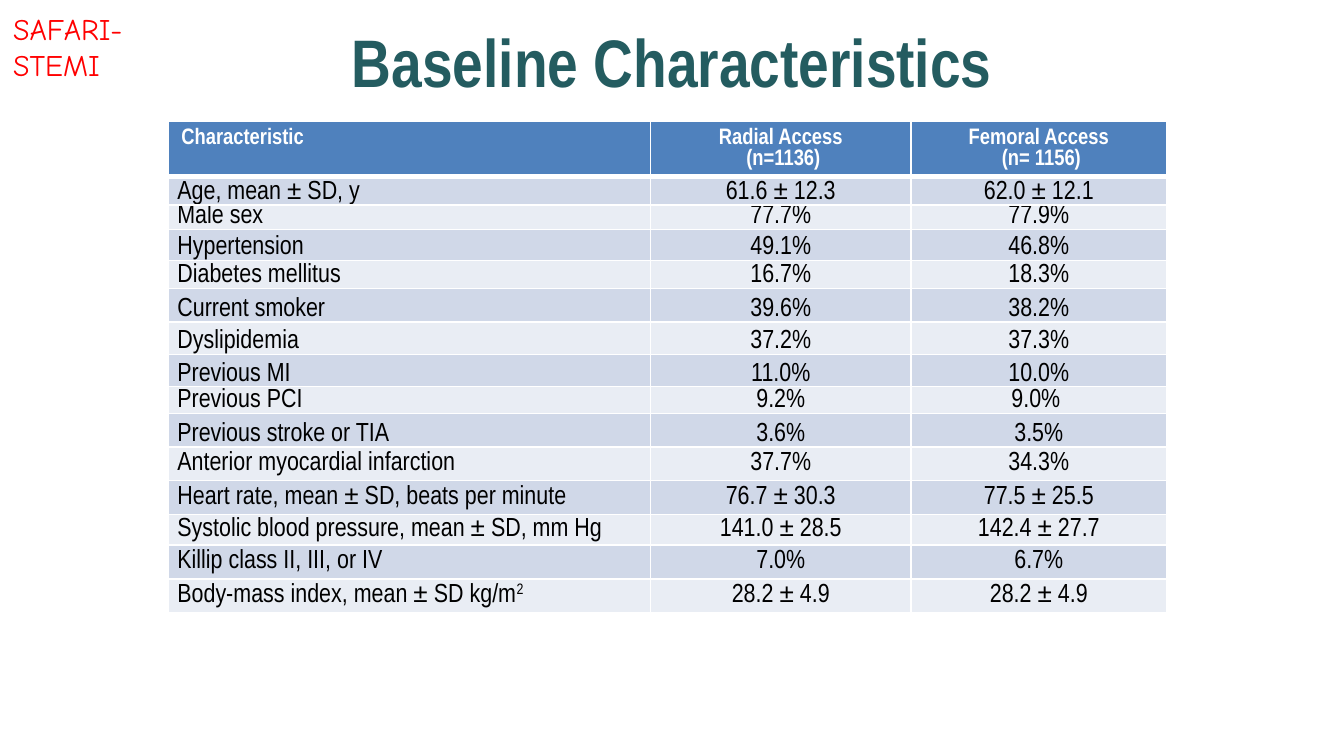
from dataclasses import dataclass

from lxml.etree import SubElement
from pptx import Presentation
from pptx.dml.color import RGBColor
from pptx.enum.text import MSO_ANCHOR as Anchor, PP_ALIGN as Align
from pptx.oxml.ns import qn
from pptx.util import Inches, Pt

COLORS = {
    "title": "245C60",
    "trial": "FF0000",
    "header": "4F81BD",
    "odd": "D0D8E8",
    "even": "E9EDF4",
    "white": "FFFFFF",
    "black": "000000",
}
NARROW = "Arial Narrow"
COLUMN_WIDTHS = (3.59, 1.94, 1.9)
HEADER_HEIGHT = 0.38
HEADERS = ("Characteristic", "Radial Access\n (n=1136)", "Femoral Access\n (n= 1156)")


@dataclass
class Characteristic:
    label: str
    radial: str
    femoral: str
    height: float = 0.25
    anchor: Anchor = Anchor.MIDDLE
    superscript: str = ""


CHARACTERISTICS = [
    Characteristic("Age, mean ± SD, y", "61.6 ± 12.3", "62.0 ± 12.1", 0.21, Anchor.BOTTOM),
    Characteristic("Male sex", "77.7%", "77.9%", 0.18, Anchor.BOTTOM),
    Characteristic("Hypertension", "49.1%", "46.8%", 0.23, Anchor.BOTTOM),
    Characteristic("Diabetes mellitus", "16.7%", "18.3%", 0.21, Anchor.BOTTOM),
    Characteristic("Current smoker", "39.6%", "38.2%", 0.25, Anchor.BOTTOM),
    Characteristic("Dyslipidemia", "37.2%", "37.3%", 0.24, Anchor.BOTTOM),
    Characteristic("Previous MI", "11.0%", "10.0%", 0.24, Anchor.BOTTOM),
    Characteristic("Previous PCI", "9.2%", "9.0% ", 0.2, Anchor.BOTTOM),
    Characteristic("Previous stroke or TIA", "3.6%", "3.5%", 0.25, Anchor.BOTTOM),
    Characteristic("Anterior myocardial infarction", "37.7%", "34.3%"),
    Characteristic("Heart rate, mean ± SD, beats per minute", "76.7 ± 30.3", "77.5 ± 25.5"),
    Characteristic("Systolic blood pressure, mean ± SD, mm Hg", "141.0 ± 28.5", "142.4 ± 27.7", 0.23),
    Characteristic("Killip class II, III, or IV", "7.0%", "6.7%"),
    Characteristic("Body-mass index, mean ± SD kg/m", "28.2 ± 4.9", "28.2 ± 4.9", superscript="2"),
]


def style_text(frame, size: float, color: str, font: str = NARROW, bold: bool = False) -> None:
    for paragraph in frame.paragraphs:
        for run in paragraph.runs:
            run.font.name = font
            run.font.size = Pt(size)
            run.font.bold = bold
            run.font.color.rgb = RGBColor.from_string(COLORS[color])


def add_borders(cell, bottom: float) -> None:
    """Borders must precede the fill in the cell properties."""
    properties = cell._tc.get_or_add_tcPr()
    for side, width in (("L", 1), ("R", 1), ("T", 1), ("B", bottom)):
        line = SubElement(properties, qn(f"a:ln{side}"), w=str(Pt(width)))
        fill = SubElement(line, qn("a:solidFill"))
        SubElement(fill, qn("a:srgbClr"), val=COLORS["white"])


def style_cell(cell, column: int, fill: str, bottom: float = 1) -> None:
    add_borders(cell, bottom)
    cell.fill.solid()
    cell.fill.fore_color.rgb = RGBColor.from_string(COLORS[fill])
    for paragraph in cell.text_frame.paragraphs:
        paragraph.alignment = Align.CENTER if column else Align.LEFT


def fill_row(table, row: int, item: Characteristic) -> None:
    table.rows[row].height = Inches(item.height)
    for column, words in enumerate((item.label, item.radial, item.femoral)):
        cell = table.cell(row, column)
        cell.text_frame.text = words
        if item.superscript and column == 0:
            raised = cell.text_frame.paragraphs[0].add_run()
            raised.text = item.superscript
            raised._r.get_or_add_rPr().set("baseline", "30000")
        cell.vertical_anchor = item.anchor
        cell.margin_left = cell.margin_right = Inches(0.07)
        cell.margin_top = cell.margin_bottom = 0
        style_cell(cell, column, "odd" if row % 2 else "even")
        style_text(cell.text_frame, 14, "black")


def add_characteristics(slide) -> None:
    height = HEADER_HEIGHT + sum(item.height for item in CHARACTERISTICS)
    table = slide.shapes.add_table(
        len(CHARACTERISTICS) + 1, len(HEADERS),
        Inches(1.25), Inches(0.9), Inches(sum(COLUMN_WIDTHS)), Inches(height),
    ).table
    table.rows[0].height = Inches(HEADER_HEIGHT)
    for column, (header, width) in enumerate(zip(HEADERS, COLUMN_WIDTHS)):
        table.columns[column].width = Inches(width)
        cell = table.cell(0, column)
        cell.text_frame.text = header
        style_cell(cell, column, "header", bottom=3)
        style_text(cell.text_frame, 12, "white", bold=True)
    for row, item in enumerate(CHARACTERISTICS, start=1):
        fill_row(table, row, item)


def main() -> None:
    # Widescreen slide, 16 by 9
    deck = Presentation()
    deck.slide_width = Inches(10)
    deck.slide_height = deck.slide_width * 9 // 16
    slide = deck.slides.add_slide(deck.slide_layouts[5])

    # Title
    title = slide.shapes.title
    title.left, title.top = Inches(0), Inches(0.02)
    title.width, title.height = Inches(10), Inches(0.86)
    title.text_frame.text = "Baseline Characteristics"
    title.text_frame.vertical_anchor = Anchor.MIDDLE
    title.text_frame.paragraphs[0].alignment = Align.CENTER
    style_text(title.text_frame, 36, "title", bold=True)

    # Baseline table
    add_characteristics(slide)

    # Trial name
    trial = slide.shapes.add_textbox(Inches(0), Inches(0.03), Inches(1.28), Inches(0.37))
    trial.text_frame.word_wrap = True
    trial.text_frame.text = "SAFARI-STEMI"
    style_text(trial.text_frame, 16, "trial", font="Comic Neue")

    deck.save("out.pptx")


if __name__ == "__main__":
    main()
